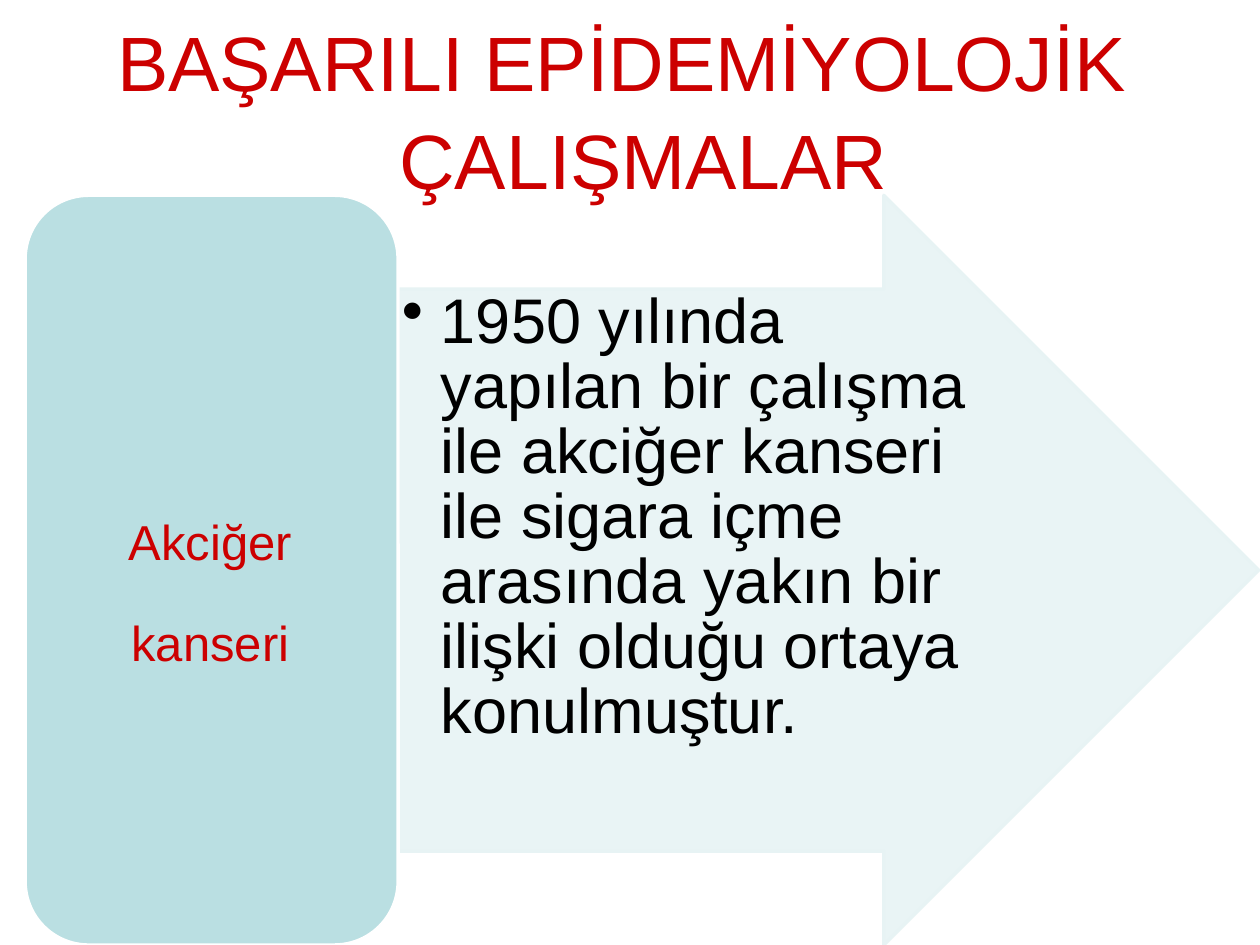
from lxml.etree import SubElement
from pptx import Presentation
from pptx.dml.color import RGBColor as RGB
from pptx.enum.shapes import MSO_SHAPE as Shape
from pptx.enum.text import MSO_ANCHOR as Anchor, PP_ALIGN as Align
from pptx.oxml.ns import qn
from pptx.util import Inches, Pt

THEME = {
    "font": "Arial",
    "red": "CC0000", "black": "000000", "white": "FFFFFF",
    "arrow": "E7F3F4", "panel": "BADFE2",
    "title_size": 44, "body_size": 36, "label_size": 28,
    "line_width": 1.92,
}

PANELS = [
    {"preset": Shape.RIGHT_ARROW, "box": (3.16, 1.55, 6.83, 5.95),
     "adjustments": (0.75, 0.5), "fill": "arrow", "line": "arrow", "opacity": 90},
    {"preset": Shape.ROUNDED_RECTANGLE, "box": (0.2, 1.55, 2.96, 5.95),
     "adjustments": (0.17,), "fill": "panel", "line": "white", "opacity": 100},
]

TEXTS = [
    {"box": (0.92, 0.06, 8.17, 1.49), "top_inset": 0.01,
     "lines": ["BAŞARILI EPİDEMİYOLOJİK ÇALIŞMALAR"],
     "size": "title_size", "color": "red", "indent": (2.25, -2.24),
     "format": {"line_spacing": 1.06, "space_before": Pt(0.9)}},
    {"box": (3.17, 2.21, 4.5, 3.74), "top_inset": 0.1,
     "lines": ["1950 yılında yapılan bir çalışma ile akciğer kanseri ile sigara "
               "içme arasında yakın bir ilişki olduğu ortaya konulmuştur."],
     "size": "body_size", "color": "black", "indent": (0.33, -0.31), "bullet": "•",
     "format": {"line_spacing": 0.86, "space_before": Pt(7)}},
    {"box": (0.92, 4.04, 1.5, 1.35), "top_inset": 0.08,
     "lines": ["Akciğer", "kanseri"],
     "size": "label_size", "color": "red", "gap": 28.6,
     "format": {"line_spacing": Pt(29.1), "space_before": Pt(5.8),
                "alignment": Align.CENTER}},
]


def set_all(target, values):
    for name, value in values.items():
        setattr(target, name, value)


def color(name):
    return RGB.from_string(THEME[name])


def add_panel(slide, panel):
    shape = slide.shapes.add_shape(panel["preset"], *map(Inches, panel["box"]))
    shape.shadow.inherit = False
    for index, value in enumerate(panel["adjustments"]):
        shape.adjustments[index] = value
    shape.fill.solid()
    shape.fill.fore_color.rgb = color(panel["fill"])
    shape.line.color.rgb = color(panel["line"])
    shape.line.width = Pt(THEME["line_width"])
    if panel["opacity"] < 100:
        fill_color = shape.fill._xPr.find(qn("a:solidFill"))[0]
        SubElement(fill_color, qn("a:alpha"), val=str(panel["opacity"] * 1000))


def set_indent(paragraph, indent, bullet):
    """Set left margin and first-line indent in inches, with an optional bullet."""
    properties = paragraph._p.get_or_add_pPr()
    for name, value in zip(("marL", "indent"), indent):
        properties.set(name, str(Inches(value)))
    if bullet:
        SubElement(properties, qn("a:buChar"), char=bullet)


def add_text(slide, text):
    frame = slide.shapes.add_textbox(*map(Inches, text["box"])).text_frame
    set_all(frame, {"word_wrap": True, "vertical_anchor": Anchor.TOP,
                    "margin_left": 0, "margin_right": 0, "margin_bottom": 0,
                    "margin_top": Inches(text["top_inset"])})
    for index, line in enumerate(text["lines"]):
        paragraph = frame.add_paragraph() if index else frame.paragraphs[0]
        set_all(paragraph, text["format"])
        if index:
            paragraph.space_before = Pt(text["gap"])
        if "indent" in text:
            set_indent(paragraph, text["indent"], text.get("bullet"))
        run = paragraph.add_run()
        run.text = line
        set_all(run.font, {"name": THEME["font"], "size": Pt(THEME[text["size"]])})
        run.font.color.rgb = color(text["color"])


def main():
    presentation = Presentation()
    set_all(presentation, {"slide_width": Inches(10), "slide_height": Inches(7.5)})
    slide = presentation.slides.add_slide(presentation.slide_layouts[6])
    for panel in PANELS:
        add_panel(slide, panel)
    for text in TEXTS:
        add_text(slide, text)
    presentation.save("out.pptx")


if __name__ == "__main__":
    main()
